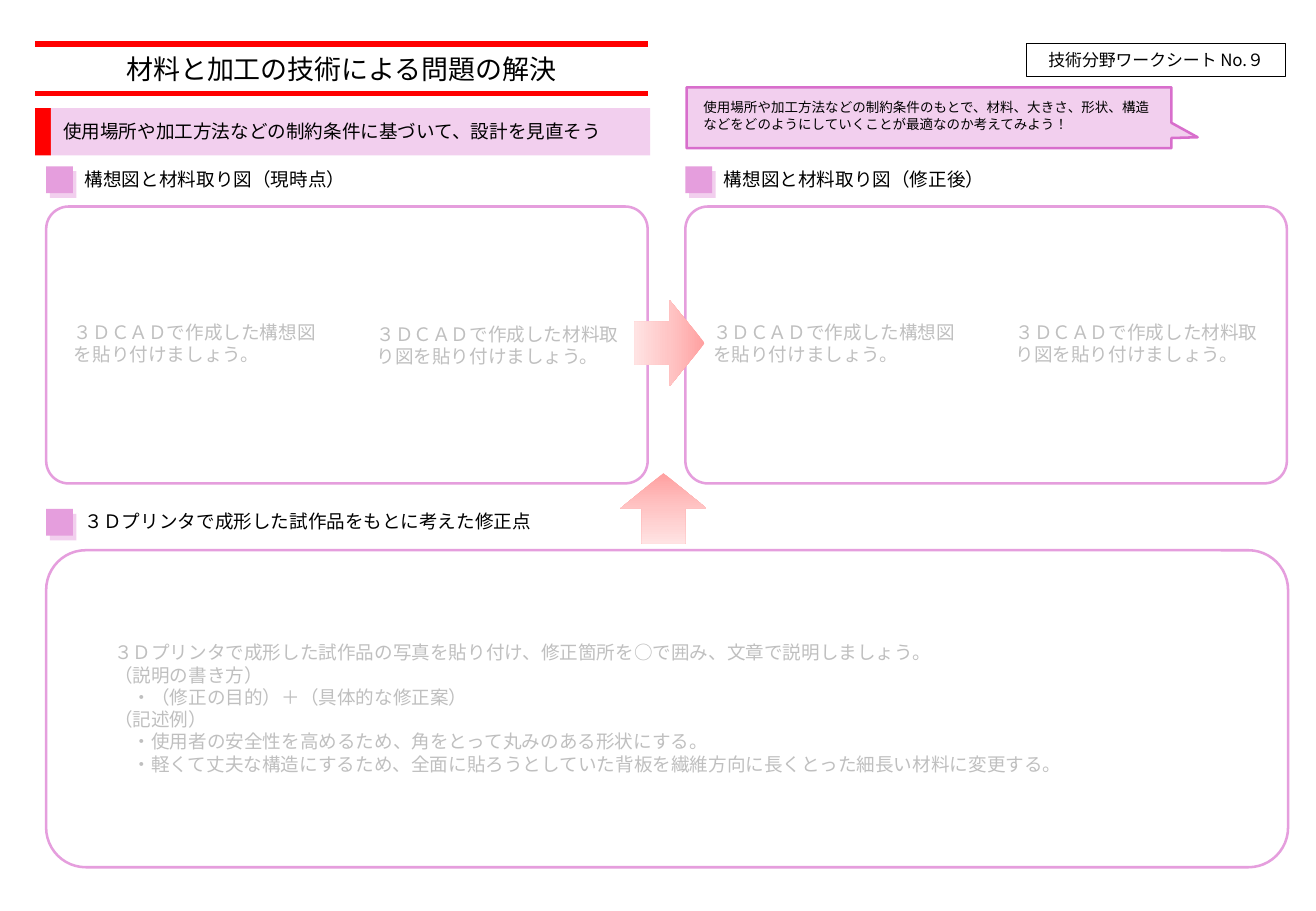
from lxml import etree
from pptx import Presentation
from pptx.dml.color import RGBColor
from pptx.enum.lang import MSO_LANGUAGE_ID
from pptx.enum.shapes import MSO_CONNECTOR, MSO_SHAPE
from pptx.enum.text import MSO_ANCHOR, MSO_AUTO_SIZE, PP_ALIGN
from pptx.oxml.ns import qn
from pptx.util import Inches, Pt

RECTANGLE = MSO_SHAPE.RECTANGLE
ROUNDED = MSO_SHAPE.ROUNDED_RECTANGLE
CALLOUT = MSO_SHAPE.RECTANGULAR_CALLOUT
RIGHT_ARROW = MSO_SHAPE.RIGHT_ARROW
STRAIGHT = MSO_CONNECTOR.STRAIGHT
LEFT, CENTER = PP_ALIGN.LEFT, PP_ALIGN.CENTER
TOP, MIDDLE = MSO_ANCHOR.TOP, MSO_ANCHOR.MIDDLE
NO_AUTOFIT = MSO_AUTO_SIZE.NONE
JAPANESE = MSO_LANGUAGE_ID.JAPANESE

FONT = "Noto Sans CJK JP"
BLACK, RED, HINT_GRAY = "000000", "FF0000", "BFBFBF"
PALE_PINK, PINK, DEEP_PINK = "F2CFEE", "E59EDD", "D86ECC"
ARROW_STOPS = [("0", "FFA0A0"), ("50000", "FFC5C5"), ("100000", "FFE3E3")]

PANEL_COLUMNS = [0.38, 5.64]
PANEL_HEADINGS = ["構想図と材料取り図（現時点）", "構想図と材料取り図（修正後）"]
SKETCH_HINT = "３ＤＣＡＤで作成した構想図を貼り付けましょう。"
CUTTING_HINT = "３ＤＣＡＤで作成した材料取り図を貼り付けましょう。"
REVISION_HINTS = [
    "３Ｄプリンタで成形した試作品の写真を貼り付け、修正箇所を○で囲み、文章で説明しましょう。",
    "（説明の書き方）",
    "　・（修正の目的）＋（具体的な修正案）",
    "（記述例）",
    "　・使用者の安全性を高めるため、角をとって丸みのある形状にする。",
    "　・軽くて丈夫な構造にするため、全面に貼ろうとしていた背板を繊維方向に長くとった細長い材料に変更する。",
]


def color(value):
    return RGBColor.from_string(value)


def write(shape, lines, size, text_color=BLACK, align=LEFT, anchor=TOP):
    frame = shape.text_frame
    frame.word_wrap = True
    frame.auto_size = NO_AUTOFIT
    frame.vertical_anchor = anchor
    for index, line in enumerate(lines):
        paragraph = frame.add_paragraph() if index else frame.paragraphs[0]
        paragraph.alignment = align
        run = paragraph.add_run()
        run.text = line
        font = run.font
        font.size = Pt(size)
        font.name = FONT
        font.language_id = JAPANESE
        font.color.rgb = color(text_color)
        latin = run._r.rPr.find(qn("a:latin"))
        east_asian = etree.Element(qn("a:ea"), typeface=FONT)
        latin.addnext(east_asian)


def add_text(slide, left, top, width, height, lines, size=11, text_color=BLACK):
    box = slide.shapes.add_textbox(Inches(left), Inches(top), Inches(width), Inches(height))
    write(box, lines, size, text_color)


def add_box(slide, kind, left, top, width, height, fill=None, line=None, weight=1.5, adjustments=()):
    shape = slide.shapes.add_shape(kind, Inches(left), Inches(top), Inches(width), Inches(height))
    shape.shadow.inherit = False
    for index, value in enumerate(adjustments):
        shape.adjustments[index] = value
    if fill:
        shape.fill.solid()
        shape.fill.fore_color.rgb = color(fill)
    else:
        shape.fill.background()
    if line:
        shape.line.color.rgb = color(line)
        shape.line.width = Pt(weight)
    else:
        shape.line.fill.background()
    return shape


def add_rule(slide, left, top, width):
    rule = slide.shapes.add_connector(
        STRAIGHT, Inches(left), Inches(top), Inches(left + width), Inches(top))
    rule.line.color.rgb = color(RED)
    rule.line.width = Pt(3.5)
    etree.SubElement(rule._element.spPr, qn("a:effectLst"))


def add_heading(slide, left, top, text):
    """Section heading with a two-tone square marker."""
    add_box(slide, RECTANGLE, left + 0.03, top + 0.04, 0.22, 0.22, PALE_PINK)
    add_box(slide, RECTANGLE, left, top, 0.22, 0.22, PINK)
    add_text(slide, left + 0.22, top - 0.04, 4.87, 0.29, [text])


def add_arrow(slide, left, top, rotation=0):
    """Block arrow that fades from its tip to its tail."""
    arrow = add_box(slide, RIGHT_ARROW, left, top, 0.58, 0.71)
    arrow.rotation = rotation
    arrow.fill.gradient()
    arrow.fill.gradient_angle = 180
    stops = arrow._element.spPr.find(qn("a:gradFill")).find(qn("a:gsLst"))
    for stop in list(stops):
        stops.remove(stop)
    for position, value in ARROW_STOPS:
        stop = etree.SubElement(stops, qn("a:gs"), pos=position)
        etree.SubElement(stop, qn("a:srgbClr"), val=value)


def add_title(slide):
    title = slide.shapes.title
    title.left, title.top = Inches(0.29), Inches(0.38)
    title.width, title.height = Inches(5.04), Inches(0.37)
    write(title, ["材料と加工の技術による問題の解決"], 16, align=CENTER)
    for top in (0.36, 0.77):
        add_rule(slide, 0.29, top, 5.04)


def add_goal(slide):
    add_box(slide, RECTANGLE, 0.29, 0.89, 0.13, 0.39, RED)
    add_box(slide, RECTANGLE, 0.42, 0.89, 4.93, 0.39, PALE_PINK)
    add_text(slide, 0.42, 0.94, 5.15, 0.29,
             ["使用場所や加工方法などの制約条件に基づいて、設計を見直そう"])


def add_sheet_number(slide):
    label = add_box(slide, RECTANGLE, 8.45, 0.36, 2.13, 0.27, line=BLACK, weight=0.75)
    write(label, ["技術分野ワークシート No.９"], 10, align=CENTER, anchor=MIDDLE)


def add_advice(slide):
    add_box(slide, CALLOUT, 5.65, 0.72, 3.99, 0.5, PALE_PINK, DEEP_PINK,
            adjustments=(0.554, 0.321))
    add_text(slide, 5.69, 0.77, 3.97, 0.37,
             ["使用場所や加工方法などの制約条件のもとで、材料、大きさ、形状、構造"
              "などをどのようにしていくことが最適なのか考えてみよう！"], size=8)


def add_drawing_panel(slide, left, heading, cutting_top):
    add_heading(slide, left, 1.37, heading)
    add_box(slide, ROUNDED, left, 1.7, 4.95, 2.28, line=PINK, adjustments=(0.081,))
    add_text(slide, left + 0.13, 2.59, 2.2, 0.47, [SKETCH_HINT], text_color=HINT_GRAY)
    add_text(slide, left + 2.62, cutting_top, 2.2, 0.47, [CUTTING_HINT], text_color=HINT_GRAY)


def add_revision_panel(slide):
    add_heading(slide, 0.38, 4.19, "３Ｄプリンタで成形した試作品をもとに考えた修正点")
    add_box(slide, ROUNDED, 0.38, 4.53, 10.22, 2.61, line=PINK, adjustments=(0.125,))
    add_text(slide, 0.84, 5.23, 9.24, 1.21, REVISION_HINTS, text_color=HINT_GRAY)


def main():
    presentation = Presentation()
    presentation.slide_width = Inches(10.83)
    presentation.slide_height = Inches(7.5)
    title_only = presentation.slide_layouts[5]
    slide = presentation.slides.add_slide(title_only)

    add_title(slide)
    add_goal(slide)
    add_sheet_number(slide)
    add_advice(slide)
    for left, heading, cutting_top in zip(PANEL_COLUMNS, PANEL_HEADINGS, (2.61, 2.59)):
        add_drawing_panel(slide, left, heading, cutting_top)
    add_revision_panel(slide)
    add_arrow(slide, 5.22, 2.47)
    add_arrow(slide, 5.17, 3.83, rotation=270)
    presentation.save("out.pptx")


if __name__ == "__main__":
    main()
